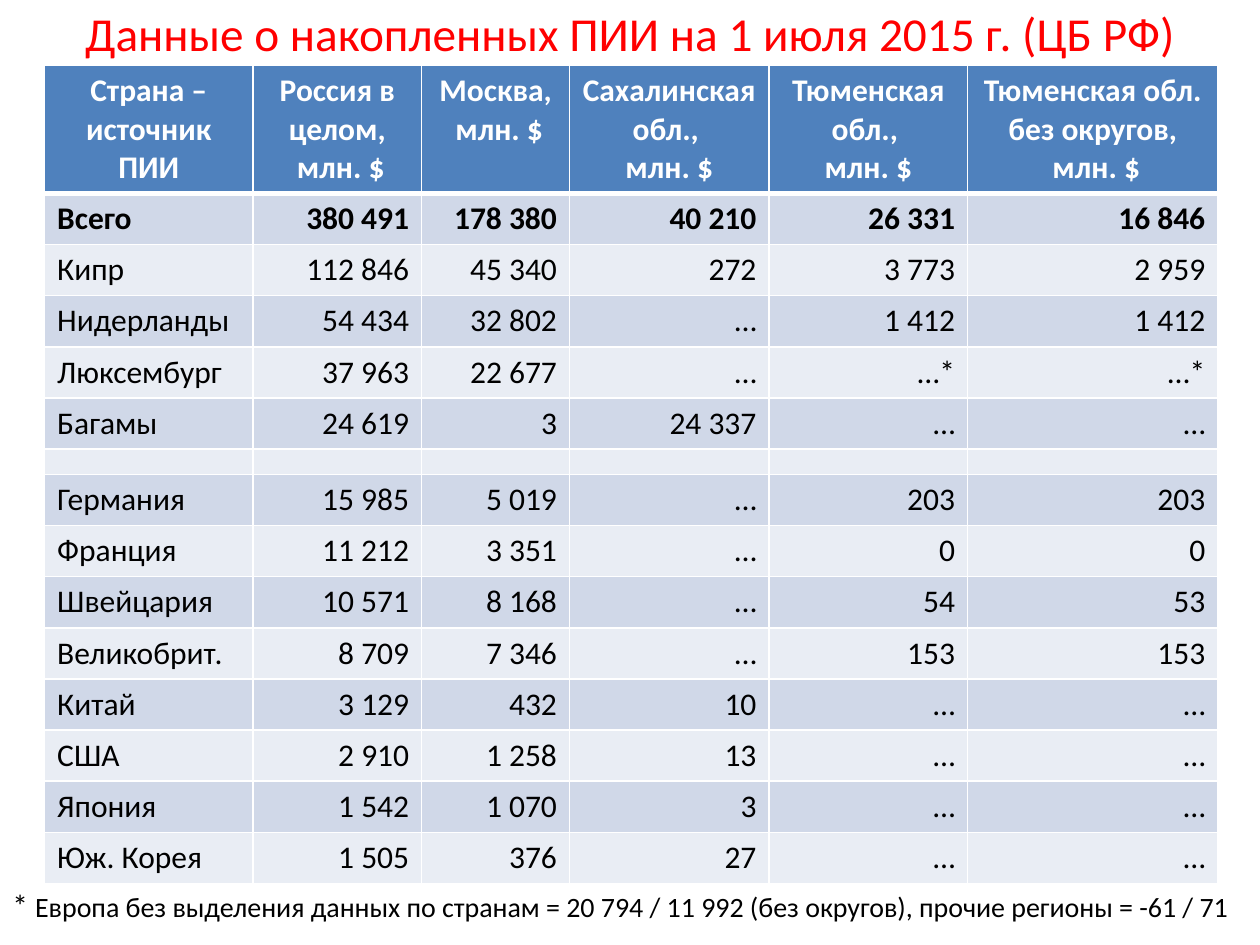
"""Builds a slide with a table of foreign direct investment by source country."""
import pptx
import pptx.dml.color
import pptx.enum.text
import pptx.oxml
import pptx.oxml.ns
import pptx.util
from dataclasses import dataclass

Pt = pptx.util.Pt
ALIGN = pptx.enum.text.PP_ALIGN
ANCHOR = pptx.enum.text.MSO_ANCHOR


@dataclass(frozen=True)
class Theme:
    font: str = "Calibri"
    red: str = "FF0000"
    black: str = "000000"
    white: str = "FFFFFF"
    blue: str = "4F81BD"
    bands: tuple = ("D0D8E8", "E9EDF4")
    title: int = 27
    body: int = 18
    note: int = 16
    gap: int = 6
    thin: int = 1
    thick: int = 3


class Deck:
    def __init__(self, theme, wide, high):
        self.theme = theme
        self.show = pptx.Presentation()
        self.show.slide_width, self.show.slide_height = Pt(wide), Pt(high)
        self.slide = self.show.slides.add_slide(self.show.slide_layouts[6])

    def run(self, para, text, size, color, bold=False):
        run = para.add_run()
        run.text = text
        font = run.font
        font.name, font.size, font.bold = self.theme.font, Pt(size), bold
        font.color.rgb = pptx.dml.color.RGBColor.from_string(color)

    def text(self, box, runs, align=ALIGN.LEFT, anchor=ANCHOR.TOP):
        frame = self.slide.shapes.add_textbox(*map(Pt, box)).text_frame
        frame.word_wrap = True
        frame.vertical_anchor = anchor
        para = frame.paragraphs[0]
        para.alignment = align
        for run in runs:
            self.run(para, *run)

    def edge(self, cell, side, width):
        space = pptx.oxml.ns.nsdecls("a")
        cell._tc.get_or_add_tcPr().append(pptx.oxml.parse_xml(
            f'<a:ln{side} {space} w="{Pt(width)}"><a:solidFill>'
            f'<a:srgbClr val="{self.theme.white}"/></a:solidFill></a:ln{side}>'))

    def cell(self, cell, lines, fill, color, bold, align, widths):
        for side, width in zip("LRTB", widths):
            self.edge(cell, side, width)
        cell.fill.solid()
        cell.fill.fore_color.rgb = pptx.dml.color.RGBColor.from_string(fill)
        frame = cell.text_frame
        for num, line in enumerate(lines):
            para = frame.add_paragraph() if num else frame.paragraphs[0]
            para.alignment = align
            if line:
                self.run(para, line, self.theme.body, color, bold)
            else:
                end = para._p.get_or_add_endParaRPr()
                end.set("sz", str(self.theme.gap * 100))

    def table(self, left, top, cols, highs, heads, rows):
        look = self.theme
        grid = self.slide.shapes.add_table(
            len(highs), len(cols), Pt(left), Pt(top), Pt(sum(cols)), Pt(sum(highs))).table
        for col, wide in zip(grid.columns, cols):
            col.width = Pt(wide)
        for row, high in zip(grid.rows, highs):
            row.height = Pt(high)
        for col, lines in enumerate(heads):
            self.cell(grid.cell(0, col), lines, look.blue, look.white, True,
                      ALIGN.CENTER, (look.thin,) * 3 + (look.thick,))
        for num, row in enumerate(rows):
            upper = look.thin if num else look.thick
            for col, text in enumerate(row):
                self.cell(grid.cell(num + 1, col), [text], look.bands[num % 2],
                          look.black, num == 0, ALIGN.RIGHT if col else ALIGN.LEFT,
                          (look.thin, look.thin, upper, look.thin))


HEADS = [
    ["Страна – источник ПИИ"],
    ["Россия в целом,", " млн. $"],
    ["Москва,", " млн. $"],
    ["Сахалинская обл., ", "млн. $"],
    ["Тюменская обл., ", "млн. $"],
    ["Тюменская обл. без округов,", " млн. $"],
]
ROWS = [
    ["Всего", "380 491", "178 380", "40 210", "26 331", "16 846"],
    ["Кипр", "112 846", "45 340", "272", "3 773", "2 959"],
    ["Нидерланды", "54 434", "32 802", "…", "1 412", "1 412"],
    ["Люксембург", "37 963", "22 677", "…", "…*", "…*"],
    ["Багамы", "24 619", "3", "24 337", "…", "…"],
    [""] * 6,
    ["Германия", "15 985", "5 019", "…", "203", "203"],
    ["Франция", "11 212", "3 351", "…", "0", "0"],
    ["Швейцария", "10 571", "8 168", "…", "54", "53"],
    ["Великобрит.", "8 709", "7 346", "…", "153", "153"],
    ["Китай", "3 129", "432", "10", "…", "…"],
    ["США", "2 910", "1 258", "13", "…", "…"],
    ["Япония", "1 542", "1 070", "3", "…", "…"],
    ["Юж. Корея", "1 505", "376", "27", "…", "…"],
]


def main():
    look = Theme()
    deck = Deck(look, 720, 540)
    deck.text((0, 0, 720, 37.5),
              [("Данные о накопленных ПИИ на 1 июля 2015 г. (ЦБ РФ)", look.title, look.red)],
              ALIGN.CENTER, ANCHOR.MIDDLE)
    highs = [73] + [29.25 if row[0] else 14.4 for row in ROWS]
    deck.table(25.5, 37.5, [119, 96.5, 84.5, 114, 113.5, 143], highs, HEADS, ROWS)
    deck.text((0, 502.5, 720, 29), [
        ("* ", look.body, look.black),
        ("Европа без выделения данных по странам = 20 794 / 11 992 (без округов), "
         "прочие регионы = -61 / 71", look.note, look.black)])
    deck.show.save("out.pptx")


if __name__ == "__main__":
    main()
